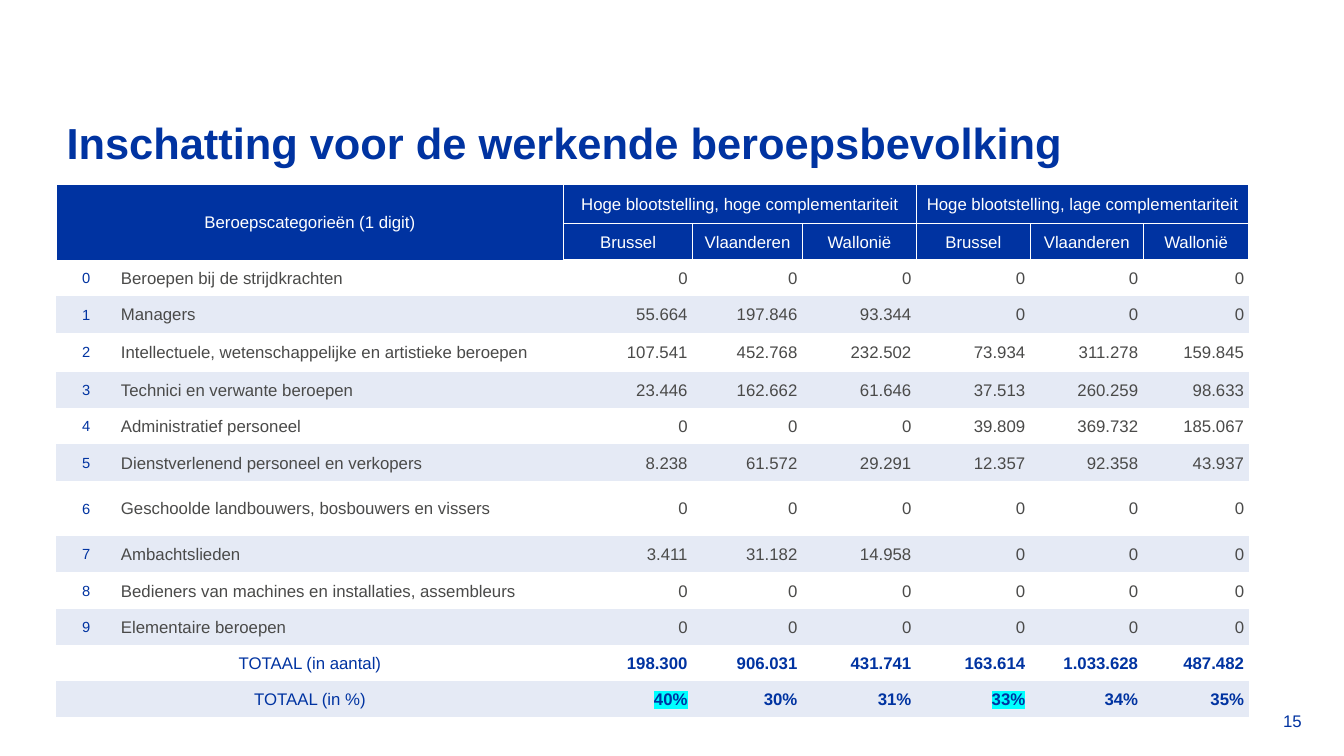
from lxml.etree import SubElement
from pptx import Presentation
from pptx.dml.color import RGBColor
from pptx.enum.text import MSO_ANCHOR, MSO_AUTO_SIZE, PP_ALIGN
from pptx.oxml.ns import qn
from pptx.util import Inches, Pt

TITLE = "Inschatting voor de werkende beroepsbevolking"
PAGE_NUMBER = "15"
CATEGORY_HEADER = "Beroepscategorieën (1 digit)"
GROUPS = ["Hoge blootstelling, hoge complementariteit",
          "Hoge blootstelling, lage complementariteit"]
REGIONS = ["Brussel", "Vlaanderen", "Wallonië"]
OCCUPATIONS = [
    ("Beroepen bij de strijdkrachten", "0 0 0 0 0 0"),
    ("Managers", "55.664 197.846 93.344 0 0 0"),
    ("Intellectuele, wetenschappelijke en artistieke beroepen",
     "107.541 452.768 232.502 73.934 311.278 159.845"),
    ("Technici en verwante beroepen", "23.446 162.662 61.646 37.513 260.259 98.633"),
    ("Administratief personeel", "0 0 0 39.809 369.732 185.067"),
    ("Dienstverlenend personeel en verkopers", "8.238 61.572 29.291 12.357 92.358 43.937"),
    ("Geschoolde landbouwers, bosbouwers en vissers", "0 0 0 0 0 0"),
    ("Ambachtslieden", "3.411 31.182 14.958 0 0 0"),
    ("Bedieners van machines en installaties, assembleurs", "0 0 0 0 0 0"),
    ("Elementaire beroepen", "0 0 0 0 0 0"),
]
TOTALS = [
    ("TOTAAL (in aantal)", "198.300 906.031 431.741 163.614 1.033.628 487.482"),
    ("TOTAAL (in %)", "40% 30% 31% 33% 34% 35%"),
]
HIGHLIGHTED = {"40%", "33%"}

BLUE = RGBColor(0x00, 0x33, 0xA1)
WHITE = RGBColor(0xFF, 0xFF, 0xFF)
GREY = RGBColor(0x4A, 0x4A, 0x49)
BAND = RGBColor(0xE5, 0xEA, 0xF5)
CYAN = RGBColor(0x00, 0xFF, 0xFF)

LEFT, WIDTH = 0.56, 11.84
COLUMNS = [0.59, 4.44, 1.28, 1.09, 1.13, 1.13, 1.12, 1.05]
HEADER_ROWS = 2
ROW_HEIGHT = 0.36
SPECIAL_HEIGHTS = {0: 0.39, 4: 0.39, 8: 0.55}
ROW_COUNT = HEADER_ROWS + len(OCCUPATIONS) + len(TOTALS)
HEIGHTS = [SPECIAL_HEIGHTS.get(row, ROW_HEIGHT) for row in range(ROW_COUNT)]
PLAIN_TABLE_STYLE = "{2D5ABB26-0587-4C30-8999-92F81FD0307C}"


def write(frame, text, size=12, color=BLUE, bold=False, align=PP_ALIGN.LEFT,
          line_spacing=None, space=None, highlight=None):
    paragraph = frame.paragraphs[0]
    paragraph.alignment = align
    if line_spacing:
        paragraph.line_spacing = line_spacing
    if space:
        paragraph.space_after = Pt(space)
    run = paragraph.add_run()
    run.text = text
    run.font.size, run.font.bold = Pt(size), bold
    run.font.color.rgb = color
    if highlight:
        mark = SubElement(run.font._element, qn("a:highlight"))
        SubElement(mark, qn("a:srgbClr"), val=str(highlight))
    run.font.name = "Arial"


def write_cell(cell, text, **text_format):
    cell.margin_left = cell.margin_right = Inches(0.05)
    cell.margin_top = cell.margin_bottom = 0
    cell.vertical_anchor = MSO_ANCHOR.MIDDLE
    write(cell.text_frame, text, line_spacing=1.07, space=1, **text_format)


def style_header_cell(cell):
    properties = cell._tc.get_or_add_tcPr()
    for side in ("lnL", "lnR", "lnT"):
        line = SubElement(properties, qn(f"a:{side}"), w=str(Pt(1)))
        fill = SubElement(line, qn("a:solidFill"))
        SubElement(fill, qn("a:srgbClr"), val=str(WHITE))
    cell.fill.solid()
    cell.fill.fore_color.rgb = BLUE


def fill_header(table):
    for row in range(HEADER_ROWS):
        for column in range(len(COLUMNS)):
            style_header_cell(table.cell(row, column))
    header = {"color": WHITE, "align": PP_ALIGN.CENTER}
    table.cell(0, 0).merge(table.cell(1, 1))
    write_cell(table.cell(0, 0), CATEGORY_HEADER, **header)
    for group, name in enumerate(GROUPS):
        first = 2 + group * len(REGIONS)
        table.cell(0, first).merge(table.cell(0, first + len(REGIONS) - 1))
        write_cell(table.cell(0, first), name, **header)
        for offset, region in enumerate(REGIONS):
            write_cell(table.cell(1, first + offset), region, **header)


def fill_body(table):
    for index, (label, values) in enumerate(OCCUPATIONS + TOTALS):
        row = HEADER_ROWS + index
        is_total = index >= len(OCCUPATIONS)
        for column in range(len(COLUMNS)):
            fill = table.cell(row, column).fill
            if index % 2:
                fill.solid()
                fill.fore_color.rgb = BAND
            else:
                fill.background()
        if is_total:
            table.cell(row, 0).merge(table.cell(row, 1))
            write_cell(table.cell(row, 0), label, align=PP_ALIGN.CENTER)
        else:
            write_cell(table.cell(row, 0), str(index), size=10.5, align=PP_ALIGN.CENTER)
            write_cell(table.cell(row, 1), label, color=GREY)
        for column, value in enumerate(values.split(), start=2):
            write_cell(table.cell(row, column), value, bold=is_total,
                       color=BLUE if is_total else GREY, align=PP_ALIGN.RIGHT,
                       highlight=CYAN if value in HIGHLIGHTED else None)


def add_occupation_table(slide):
    shape = slide.shapes.add_table(ROW_COUNT, len(COLUMNS), Inches(LEFT), Inches(1.83),
                                   Inches(WIDTH), Inches(sum(HEIGHTS)))
    table = shape.table
    table.first_row = table.horz_banding = False
    table._tbl.tblPr.find(qn("a:tableStyleId")).text = PLAIN_TABLE_STYLE
    for column, width in zip(table.columns, COLUMNS):
        column.width = Inches(width)
    for row, height in zip(table.rows, HEIGHTS):
        row.height = Inches(height)
    fill_header(table)
    fill_body(table)


def main():
    presentation = Presentation()
    presentation.slide_width, presentation.slide_height = Inches(13.33), Inches(7.5)
    slide = presentation.slides.add_slide(presentation.slide_layouts[5])

    title = slide.shapes.title
    title.left, title.top = Inches(LEFT), Inches(1.05)
    title.width, title.height = Inches(WIDTH), Inches(1.45)
    frame = title.text_frame
    frame.auto_size = MSO_AUTO_SIZE.NONE
    frame.vertical_anchor = MSO_ANCHOR.TOP
    frame.margin_top = Inches(0.16)
    write(frame, TITLE, size=31, bold=True, line_spacing=0.9)

    add_occupation_table(slide)

    number = slide.shapes.add_textbox(Inches(10.01), Inches(6.95), Inches(3), Inches(0.4))
    number.text_frame.word_wrap = True
    number.text_frame.vertical_anchor = MSO_ANCHOR.MIDDLE
    write(number.text_frame, PAGE_NUMBER, align=PP_ALIGN.RIGHT)

    presentation.save("out.pptx")


if __name__ == "__main__":
    main()
